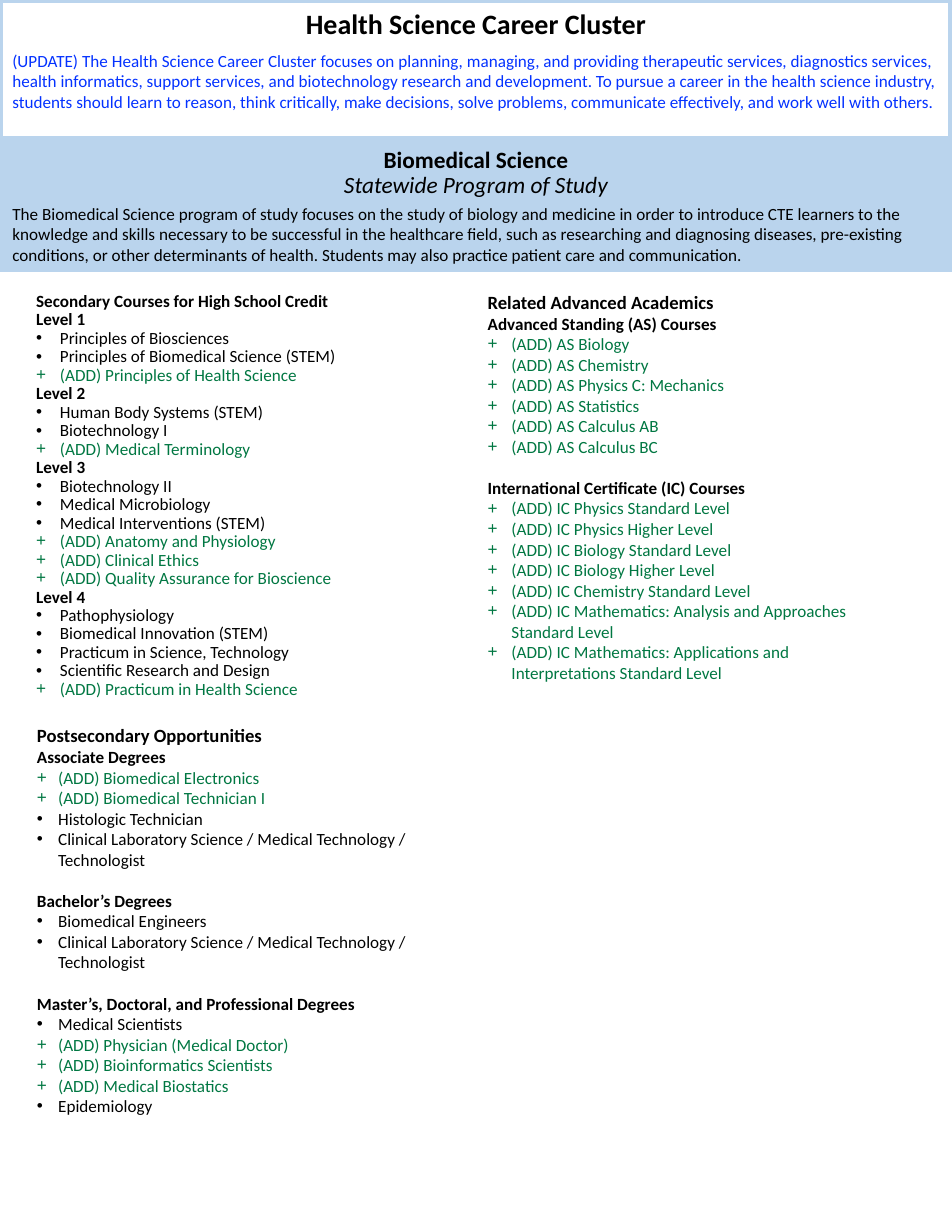
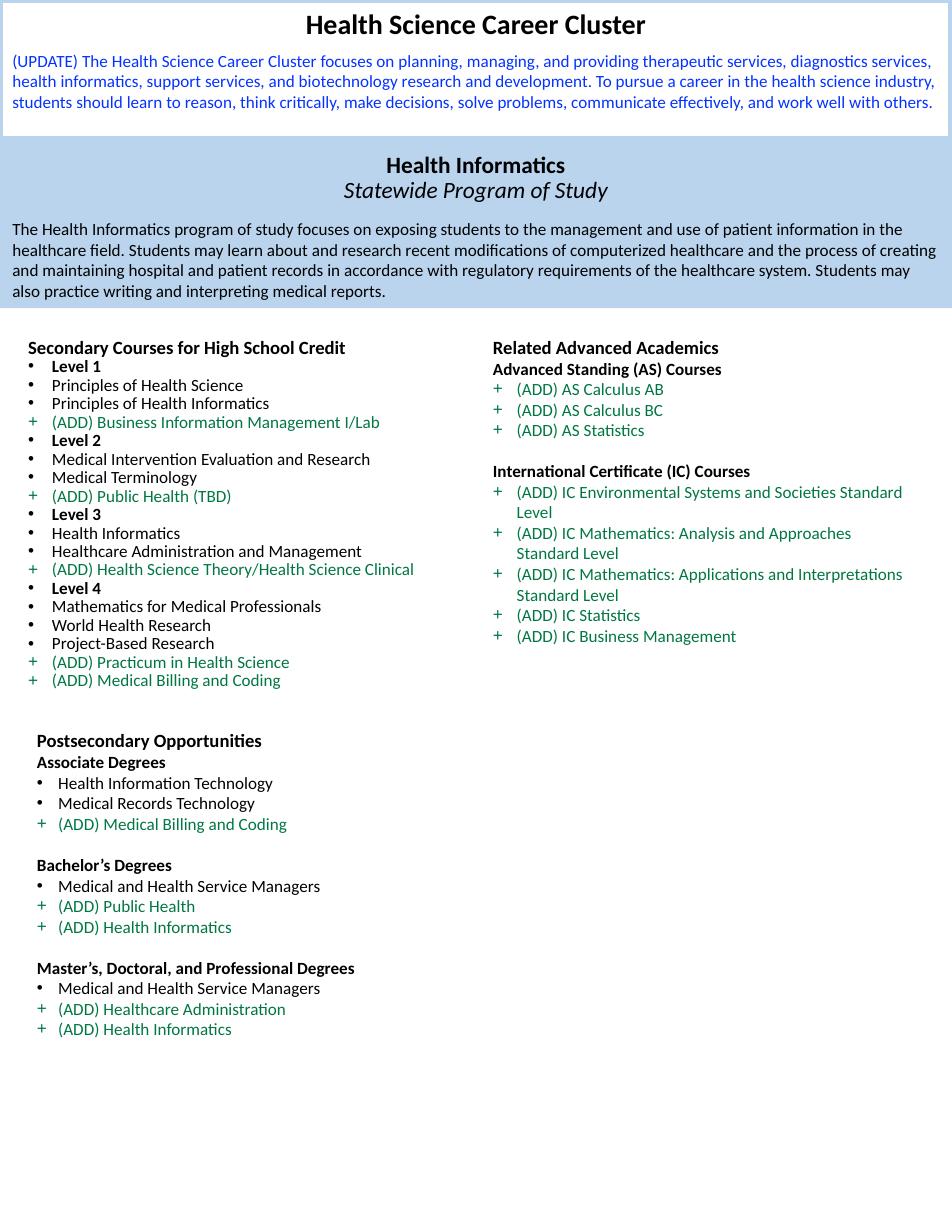
from dataclasses import dataclass

from lxml.etree import SubElement
from pptx import Presentation
from pptx.dml.color import RGBColor
from pptx.enum.shapes import MSO_SHAPE
from pptx.enum.text import MSO_ANCHOR, PP_ALIGN
from pptx.oxml.ns import qn
from pptx.util import Cm, Pt


@dataclass(frozen=True)
class Theme:
    font: str = "Calibri"
    bullet_font: str = "Arial"
    ink: RGBColor = RGBColor(0, 0, 0)
    added: RGBColor = RGBColor(0x00, 0x77, 0x42)
    updated: RGBColor = RGBColor(0x04, 0x32, 0xFF)
    band: RGBColor = RGBColor(0xBA, 0xD4, 0xED)
    cluster_size: float = 18
    program_size: float = 15
    section_size: float = 12
    body_size: float = 11
    group_gap: float = 13.2
    border: float = 4.5


@dataclass(frozen=True)
class Box:
    left: float
    top: float
    width: float
    height: float

    def lengths(self):
        return Cm(self.left), Cm(self.top), Cm(self.width), Cm(self.height)


@dataclass(frozen=True)
class Section:
    """A heading followed by groups of (subheading, entries)."""
    heading: str
    groups: list
    heading_size: float = Theme.section_size
    indent: float = 0.54
    spacing: float = 1.0
    gap: float = Theme.group_gap
    bullet_subheadings: bool = False
    inset: tuple = (0.26, 0.14)


THEME = Theme()
PAGE_WIDTH, PAGE_HEIGHT = 21.59, 27.94
HEADER_BOX = Box(0, 0, PAGE_WIDTH, 3.17)
WIDE_INSET = (0.28, 0.14)

CLUSTER = "Health Science Career Cluster"
CLUSTER_SUMMARY = (
    "(UPDATE) The Health Science Career Cluster focuses on planning, managing, and providing "
    "therapeutic services, diagnostics services, health informatics, support services, and "
    "biotechnology research and development. To pursue a career in the health science industry, "
    "students should learn to reason, think critically, make decisions, solve problems, "
    "communicate effectively, and work well with others."
)


# Shared text helpers
def set_frame(shape, inset, anchor=MSO_ANCHOR.TOP):
    frame = shape.text_frame
    frame.word_wrap = True
    frame.vertical_anchor = anchor
    frame.margin_left = frame.margin_right = Cm(inset[0])
    frame.margin_top = frame.margin_bottom = Cm(inset[1])
    return frame


def write(frame, text, size=THEME.body_size, color=THEME.ink, bold=False, italic=False,
          align=PP_ALIGN.LEFT, spacing=1.0, before=0, after=0):
    first = frame.paragraphs[0]
    para = frame.add_paragraph() if first.runs else first
    # A tilde marks a space where the line must not break
    para.add_run().text = text.replace("~", chr(160))
    para.alignment, para.line_spacing = align, spacing
    para.space_before, para.space_after = Pt(before), Pt(after)
    font = para.font
    font.name, font.size, font.bold, font.italic = THEME.font, Pt(size), bold, italic
    font.color.rgb = color
    return para


def add_bullet(para, mark, indent):
    props = para._p.get_or_add_pPr()
    props.set("marL", str(Cm(indent)))
    props.set("indent", str(-Cm(indent)))
    typeface = SubElement(props, qn("a:buFont"))
    typeface.set("typeface", THEME.bullet_font)
    bullet = SubElement(props, qn("a:buChar"))
    bullet.set("char", mark)
    # Bullets come before the default run properties
    defaults = props.find(qn("a:defRPr"))
    if defaults is not None:
        defaults.addprevious(typeface)
        defaults.addprevious(bullet)


def add_band(page, box, filled=True):
    band = page.shapes.add_shape(MSO_SHAPE.RECTANGLE, *box.lengths())
    band.shadow.inherit = False
    if filled:
        band.fill.solid()
        band.fill.fore_color.rgb = THEME.band
        band.line.fill.background()
    else:
        band.fill.background()
        band.line.color.rgb = THEME.band
        band.line.width = Pt(THEME.border)
    return band


# Regions of a page
def add_program_title(page, box, program):
    frame = set_frame(add_band(page, box), (0.25, 0.13), MSO_ANCHOR.MIDDLE)
    style = dict(size=THEME.program_size, align=PP_ALIGN.CENTER, spacing=0.9)
    write(frame, program, bold=True, **style)
    write(frame, "Statewide Program of Study", italic=True, **style)


def add_cluster_header(page, box):
    frame = set_frame(add_band(page, box, filled=False), WIDE_INSET)
    write(frame, CLUSTER, THEME.cluster_size, bold=True, align=PP_ALIGN.CENTER, after=6.6)
    write(frame, CLUSTER_SUMMARY, color=THEME.updated)


def add_description(page, box, description):
    write(set_frame(add_band(page, box), WIDE_INSET), description)


def add_section(page, box, section):
    frame = set_frame(page.shapes.add_textbox(*box.lengths()), section.inset)
    write(frame, section.heading, section.heading_size, bold=True)
    for number, (subheading, entries) in enumerate(section.groups):
        para = write(frame, subheading, bold=True, spacing=section.spacing,
                     before=section.gap if number else 0)
        if section.bullet_subheadings:
            add_bullet(para, "•", section.indent)
        for entry in entries:
            is_new = entry.startswith("(ADD)")
            para = write(frame, entry, color=THEME.added if is_new else THEME.ink,
                         spacing=section.spacing)
            add_bullet(para, "+" if is_new else "•", section.indent)


# Kinds of section
def secondary(levels, **options):
    groups = [(f"Level {number}", courses) for number, courses in enumerate(levels, 1)]
    return Section("Secondary Courses for High School Credit", groups,
                   spacing=0.9, gap=0, **options)


def postsecondary(associate, bachelor, advanced):
    names = ("Associate Degrees", "Bachelor’s Degrees",
             "Master’s, Doctoral, and Professional Degrees")
    return Section("Postsecondary Opportunities", list(zip(names, (associate, bachelor, advanced))),
                   indent=0.48, inset=WIDE_INSET)


def academics(standing, certificate):
    return Section("Related Advanced Academics", [
        ("Advanced Standing (AS) Courses", [f"(ADD) AS {name}" for name in standing]),
        ("International Certificate (IC) Courses", [f"(ADD) IC {name}" for name in certificate]),
    ])


PROGRAMS = [
    dict(
        program="Biomedical Science",
        title_box=Box(0, 3.18, PAGE_WIDTH, 1.5),
        description_box=Box(0, 4.47, PAGE_WIDTH, 1.7),
        description=(
            "The Biomedical Science program of study focuses on the study of biology and medicine "
            "in order to introduce CTE learners to the knowledge and skills necessary to be "
            "successful in the healthcare field, such as researching and diagnosing diseases, "
            "pre-existing conditions, or other determinants of health. Students may also practice "
            "patient care and communication."),
        sections=[
            (Box(0.56, 6.45, 10.29, 9.55), secondary([
                ["Principles of Biosciences", "Principles of Biomedical Science (STEM)",
                 "(ADD) Principles of Health Science"],
                ["Human Body Systems (STEM)", "Biotechnology I", "(ADD) Medical Terminology"],
                ["Biotechnology II", "Medical Microbiology", "Medical Interventions (STEM)",
                 "(ADD) Anatomy and Physiology", "(ADD) Clinical Ethics",
                 "(ADD) Quality Assurance for Bioscience"],
                ["Pathophysiology", "Biomedical Innovation (STEM)",
                 "Practicum in Science, Technology", "Scientific Research and Design",
                 "(ADD) Practicum in Health Science"],
            ], heading_size=THEME.body_size)),
            (Box(0.56, 16.28, 10.29, 9.27), postsecondary(
                ["(ADD) Biomedical Electronics", "(ADD) Biomedical Technician I",
                 "Histologic Technician",
                 "Clinical Laboratory Science / Medical~Technology / Technologist"],
                ["Biomedical Engineers",
                 "Clinical Laboratory Science / Medical~Technology / Technologist"],
                ["Medical Scientists", "(ADD) Physician (Medical Doctor)",
                 "(ADD) Bioinformatics Scientists", "(ADD) Medical Biostatics", "Epidemiology"])),
            (Box(10.8, 6.45, 10.29, 9.27), academics(
                ["Biology", "Chemistry", "Physics C: Mechanics", "Statistics",
                 "Calculus AB", "Calculus BC"],
                ["Physics Standard Level", "Physics Higher Level", "Biology Standard Level",
                 "Biology Higher Level", "Chemistry Standard Level",
                 "Mathematics: Analysis and Approaches Standard~Level",
                 "Mathematics: Applications and Interpretations~Standard Level"])),
        ],
    ),
    dict(
        program="Health Informatics",
        title_box=Box(0, 3.15, PAGE_WIDTH, 1.78),
        description_box=Box(0, 4.82, PAGE_WIDTH, 2.17),
        description=(
            "The Health Informatics program of study focuses on exposing students to the management "
            "and use of patient information in the healthcare field. Students may learn about and "
            "research recent modifications of computerized healthcare and the process of creating "
            "and maintaining hospital and patient records in accordance with regulatory "
            "requirements of the healthcare system. Students may also practice writing and "
            "interpreting medical reports."),
        sections=[
            (Box(0.38, 7.47, 10.03, 8.33), secondary([
                ["Principles of Health Science", "Principles of Health Informatics",
                 "(ADD) Business Information Management I/Lab"],
                ["Medical Intervention Evaluation and Research", "Medical Terminology",
                 "(ADD) Public Health (TBD)"],
                ["Health Informatics", "Healthcare Administration and Management",
                 "(ADD) Health Science Theory/Health Science Clinical"],
                ["Mathematics for Medical Professionals", "World Health Research",
                 "Project-Based Research", "(ADD) Practicum in Health Science",
                 "(ADD) Medical Billing and Coding"],
            ], bullet_subheadings=True)),
            (Box(0.56, 16.4, 10.03, 7.37), postsecondary(
                ["Health Information Technology", "Medical Records Technology",
                 "(ADD) Medical Billing and Coding"],
                ["Medical and Health Service Managers", "(ADD) Public Health",
                 "(ADD) Health Informatics"],
                ["Medical and Health Service Managers", "(ADD) Healthcare Administration",
                 "(ADD) Health Informatics"])),
            (Box(10.92, 7.47, 10.03, 7.62), academics(
                ["Calculus AB", "Calculus BC", "Statistics"],
                ["Environmental Systems and Societies Standard Level",
                 "Mathematics: Analysis and Approaches Standard~Level",
                 "Mathematics: Applications and Interpretations Standard~Level",
                 "Statistics", "Business Management"])),
        ],
    ),
]


def add_program_page(deck, program, title_box, description_box, description, sections):
    page = deck.slides.add_slide(deck.slide_layouts[6])
    add_program_title(page, title_box, program)
    add_cluster_header(page, HEADER_BOX)
    add_description(page, description_box, description)
    for box, section in sections:
        add_section(page, box, section)


def main():
    deck = Presentation()
    deck.slide_width, deck.slide_height = Cm(PAGE_WIDTH), Cm(PAGE_HEIGHT)
    for program in PROGRAMS:
        add_program_page(deck, **program)
    deck.save("out.pptx")


if __name__ == "__main__":
    main()
